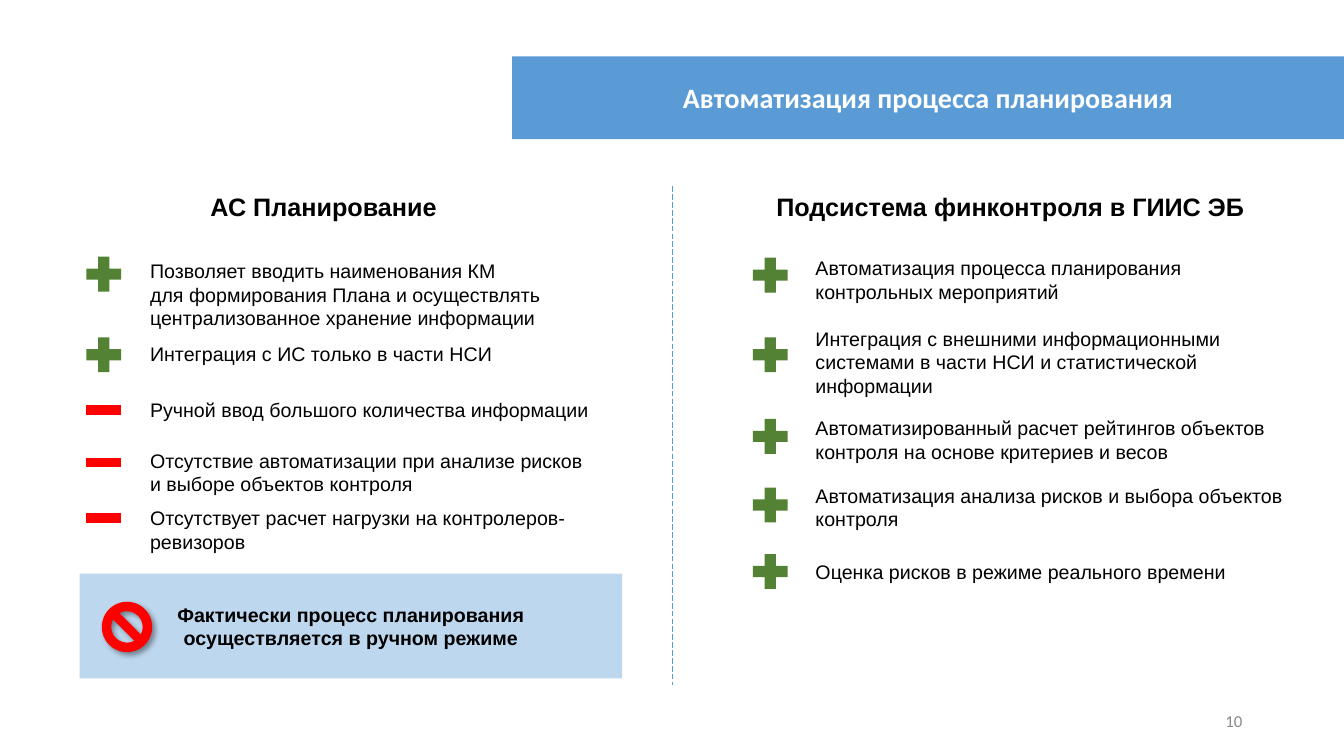
from lxml.etree import SubElement
from pptx import Presentation
from pptx.dml.color import RGBColor
from pptx.enum.dml import MSO_LINE
from pptx.enum.shapes import MSO_CONNECTOR, MSO_SHAPE
from pptx.enum.text import MSO_ANCHOR, MSO_AUTO_SIZE, PP_ALIGN
from pptx.oxml.ns import qn
from pptx.util import Inches, Pt

TITLE = "Автоматизация процесса планирования"
VERDICT = ["Фактически процесс планирования", "осуществляется в ручном режиме"]
PAGE_NUMBER = "10"
COLUMNS = [
    {
        "heading": "АС Планирование",
        "left": 0.25, "icon_center": 1.03, "text_left": 1.39,
        "items": [
            ("plus", 2.72, 2.52, 3, ["Позволяет вводить наименования КМ",
                "для формирования Плана и осуществлять централизованное хранение информации"]),
            ("plus", 3.52, 3.34, 1, ["Интеграция с ИС только в части НСИ"]),
            ("minus", 4.07, 3.9, 1, ["Ручной ввод большого количества информации"]),
            ("minus", 4.59, 4.4, 2, ["Отсутствие автоматизации при анализе рисков",
                "и выборе объектов контроля"]),
            ("minus", 5.14, 4.97, 2, ["Отсутствует расчет нагрузки на контролеров-ревизоров"]),
        ],
    },
    {
        "heading": "Подсистема финконтроля в ГИИС ЭБ",
        "left": 7.06, "icon_center": 7.64, "text_left": 7.99,
        "items": [
            ("plus", 2.73, 2.49, 2, ["Автоматизация процесса планирования контрольных мероприятий"]),
            ("plus", 3.52, 3.19, 3, ["Интеграция с внешними информационными системами "
                "в части НСИ и статистической информации"]),
            ("plus", 4.33, 4.08, 2, ["Автоматизированный расчет рейтингов объектов контроля "
                "на основе критериев и весов"]),
            ("plus", 5.01, 4.75, 2, ["Автоматизация анализа рисков и выбора объектов контроля"]),
            ("plus", 5.67, 5.51, 1, ["Оценка рисков в режиме реального времени"]),
        ],
    },
]
COLORS = {"blue": "5B9BD5", "pale": "BDD7EE", "green": "548235", "red": "FF0000",
          "black": "000000", "white": "FFFFFF", "gray": "898989"}
ICONS = {"plus": (MSO_SHAPE.MATH_PLUS, "green", 0.47),
         "minus": (MSO_SHAPE.MATH_MINUS, "red", 0.41)}
WIDTH, HEIGHT = 13.33, 7.5
HEADING_TOP, HEADING_WIDTH, HEADING_HEIGHT = 1.85, 5.92, 0.4
ICON_WIDTH, TEXT_WIDTH = 0.47, 4.87
LINE_HEIGHT, TEXT_PADDING = 0.235, 0.1


def color(name):
    return RGBColor.from_string(COLORS[name])


def write(shape, lines, size=14, font="Arial", fill="black", bold=False,
          align=PP_ALIGN.LEFT, anchor=MSO_ANCHOR.TOP):
    frame = shape.text_frame
    frame.word_wrap = True
    frame.auto_size = MSO_AUTO_SIZE.NONE
    frame.vertical_anchor = anchor
    frame.text = "\n".join(lines)
    for paragraph in frame.paragraphs:
        paragraph.alignment = align
        paragraph.font.size = Pt(size)
        paragraph.font.name = font
        paragraph.font.bold = bold
        paragraph.font.color.rgb = color(fill)


def add_text(slide, box, lines, **style):
    write(slide.shapes.add_textbox(*map(Inches, box)), lines, **style)


def add_filled(shapes, kind, box, fill):
    shape = shapes.add_shape(kind, *map(Inches, box))
    shape.shadow.inherit = False
    shape.fill.solid()
    shape.fill.fore_color.rgb = color(fill)
    shape.line.fill.background()
    return shape


def add_title(slide):
    title = slide.shapes.title
    title.left, title.top, title.width, title.height = map(Inches, (5.08, 0.56, 8.25, 0.82))
    title.fill.solid()
    title.fill.fore_color.rgb = color("blue")
    write(title, [TITLE], size=20, font="Calibri", fill="white", bold=True,
          align=PP_ALIGN.CENTER, anchor=MSO_ANCHOR.MIDDLE)


def add_column(slide, column):
    add_text(slide, (column["left"], HEADING_TOP, HEADING_WIDTH, HEADING_HEIGHT),
             [column["heading"]], size=18, bold=True, align=PP_ALIGN.CENTER)
    for sign, icon_middle, text_top, line_count, lines in column["items"]:
        kind, fill, icon_height = ICONS[sign]
        icon_left = column["icon_center"] - ICON_WIDTH / 2
        icon_top = icon_middle - icon_height / 2
        add_filled(slide.shapes, kind, (icon_left, icon_top, ICON_WIDTH, icon_height), fill)
        text_height = TEXT_PADDING + LINE_HEIGHT * line_count
        add_text(slide, (column["text_left"], text_top, TEXT_WIDTH, text_height), lines)


def add_divider(slide):
    divider = slide.shapes.add_connector(
        MSO_CONNECTOR.STRAIGHT, Inches(WIDTH / 2), Inches(HEADING_TOP),
        Inches(WIDTH / 2), Inches(6.8))
    divider.line.color.rgb = color("blue")
    divider.line.width = Pt(0.5)
    divider.line.dash_style = MSO_LINE.LONG_DASH
    SubElement(divider.element.spPr, qn("a:effectLst"))


def add_shadow(shape):
    effects = shape.element.spPr.find(qn("a:effectLst"))
    shadow = SubElement(effects, qn("a:outerShdw"), blurRad=str(Pt(4)), dist=str(Pt(3)),
                        dir="2700000", algn="tl", rotWithShape="0")
    shade = SubElement(shadow, qn("a:srgbClr"), val=COLORS["black"])
    SubElement(shade, qn("a:alpha"), val="40000")


def add_verdict(slide):
    group = slide.shapes.add_group_shape()
    panel = add_filled(group.shapes, MSO_SHAPE.RECTANGLE, (0.79, 5.69, 5.38, 1.04), "pale")
    write(panel, VERDICT, bold=True, align=PP_ALIGN.CENTER, anchor=MSO_ANCHOR.MIDDLE)
    add_shadow(add_filled(group.shapes, MSO_SHAPE.NO_SYMBOL, (1.01, 5.97, 0.5, 0.5), "red"))


def main():
    presentation = Presentation()
    presentation.slide_width = Inches(WIDTH)
    presentation.slide_height = Inches(HEIGHT)
    slide = presentation.slides.add_slide(presentation.slide_layouts[5])
    add_title(slide)
    for column in COLUMNS:
        add_column(slide, column)
    add_divider(slide)
    add_verdict(slide)
    add_text(slide, (9.42, 6.95, 3, 0.4), [PAGE_NUMBER], size=12, font="Calibri",
             fill="gray", align=PP_ALIGN.RIGHT, anchor=MSO_ANCHOR.MIDDLE)
    presentation.save("out.pptx")


if __name__ == "__main__":
    main()
